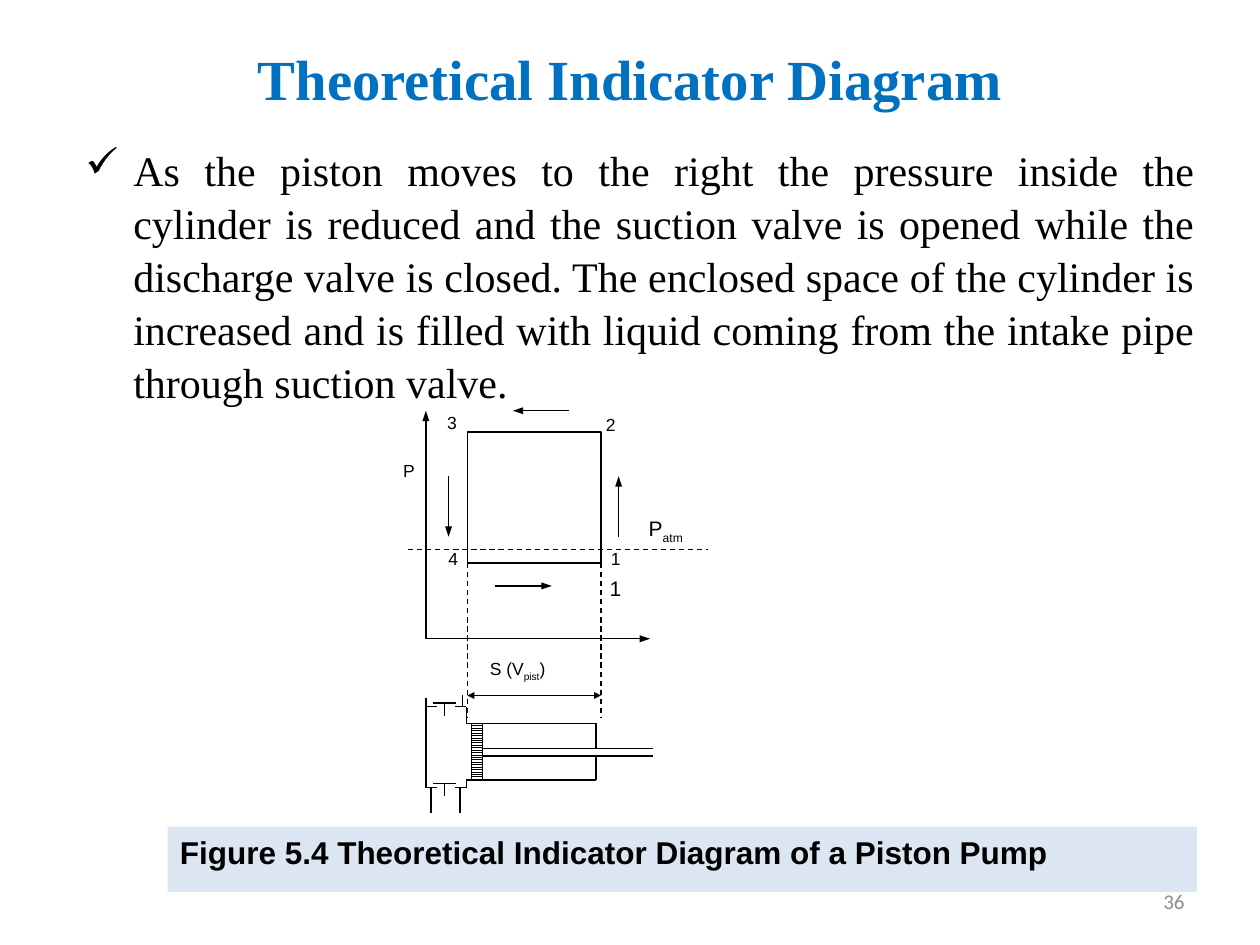
from pptx import Presentation
from pptx.dml.color import RGBColor
from pptx.enum.dml import MSO_LINE, MSO_PATTERN
from pptx.enum.shapes import MSO_CONNECTOR, MSO_SHAPE
from pptx.enum.text import MSO_ANCHOR as Anchor, PP_ALIGN as Align
from pptx.oxml.ns import qn
from pptx.util import Emu, Pt
from lxml.etree import SubElement

PX = 9144
BLACK = "000000"


def px(value):
    return Emu(value * PX)


def color(hex_string):
    return RGBColor.from_string(hex_string)


class IndicatorSlide:
    line_width = Pt(0.75)

    def __init__(self, presentation):
        self.shapes = presentation.slides.add_slide(presentation.slide_layouts[6]).shapes

    def add_runs(self, shape, runs, size, font="Arial", ink=BLACK, bold=False,
                 align=Align.LEFT, anchor=Anchor.TOP):
        frame = shape.text_frame
        frame.word_wrap = True
        frame.vertical_anchor = anchor
        paragraph = frame.paragraphs[0]
        paragraph.alignment = align
        for text, baseline in runs:
            run = paragraph.add_run()
            run.text = text
            run.font.name = font
            run.font.size = Pt(size)
            run.font.bold = bold
            run.font.color.rgb = color(ink)
            if baseline:
                run._r.get_or_add_rPr().set("baseline", str(baseline))
        return paragraph

    def text(self, box, runs, size, **style):
        if isinstance(runs, str):
            runs = [(runs, 0)]
        shape = self.shapes.add_textbox(*map(px, box))
        return self.add_runs(shape, runs, size, **style)

    def bullet(self, box, mark, text, size, indent, **style):
        paragraph = self.text(box, text, size, **style)
        paragraph.line_spacing = 1.05
        properties = paragraph._p.get_or_add_pPr()
        properties.set("marL", str(px(indent)))
        properties.set("indent", str(-px(indent)))
        SubElement(properties, qn("a:buChar")).set("char", mark)

    def rectangle(self, box, fill=None, outlined=True):
        shape = self.shapes.add_shape(MSO_SHAPE.RECTANGLE, *map(px, box))
        shape.shadow.inherit = False
        if fill:
            shape.fill.solid()
            shape.fill.fore_color.rgb = color(fill)
        else:
            shape.fill.background()
        if outlined:
            shape.line.color.rgb = color(BLACK)
            shape.line.width = self.line_width
        else:
            shape.line.fill.background()
        return shape

    def hatched(self, box):
        fill = self.rectangle(box).fill
        fill.patterned()
        fill.pattern = MSO_PATTERN.LIGHT_HORIZONTAL
        fill.fore_color.rgb = color(BLACK)
        fill.back_color.rgb = color("FFFFFF")

    def line(self, x1, y1, x2, y2, dashed=False, heads=(), head_length="med"):
        connector = self.shapes.add_connector(
            MSO_CONNECTOR.STRAIGHT, *map(px, (x1, y1, x2, y2)))
        connector.line.color.rgb = color(BLACK)
        connector.line.width = self.line_width
        if dashed:
            connector.line.dash_style = MSO_LINE.DASH
        properties = connector._element.spPr
        outline = properties.find(qn("a:ln"))
        for end in heads:
            head = SubElement(outline, qn("a:" + end))
            head.set("type", "triangle")
            head.set("w", "sm")
            head.set("len", head_length)
        SubElement(properties, qn("a:effectLst"))

    def arrow(self, x1, y1, x2, y2):
        self.line(x1, y1, x2, y2, heads=["tailEnd"])


def draw_diagram(slide):
    left, right, top, bottom = 371, 477, 343, 447
    axis_x, axis_y = 338, 507

    slide.arrow(axis_x, axis_y, axis_x, 326)
    slide.arrow(axis_x, axis_y, 516, axis_y)
    slide.rectangle((left, top, right - left, bottom - top))
    slide.line(324, 436, 562, 436, dashed=True)
    for x in (left, right):
        slide.line(x, bottom, x, 569, dashed=True)
    slide.line(left, 552, right, 552, heads=["headEnd", "tailEnd"], head_length="sm")

    for ends in ((491, 426, 491, 378), (452, 326, 407, 326),
                 (356, 378, 356, 426), (393, 465, 438, 465)):
        slide.arrow(*ends)

    for x, y, label in ((471, 324, "2"), (345, 322, "3"), (346, 430, "4"),
                        (475, 430, "1"), (310, 360, "P")):
        slide.text((x, y, 45, 32), label, 10)
    slide.text((474, 452, 45, 32), "1", 12)
    slide.text((505, 404, 125, 48), [("P", 0), ("atm", -30000)], 12)
    slide.text((379, 517, 125, 48), [("S (V", 0), ("pist", -30000), (")", 0)], 10)


def draw_pump(slide):
    head_left, head_right, cylinder_right = 338, 370, 473

    for seat in (561, 625):
        slide.line(head_left, seat, 347, seat)
        slide.line(361, seat, head_right, seat)
        slide.line(344, seat - 3, 362, seat - 3)
        slide.line(353, seat - 3, 353, seat + 7)
    slide.line(head_left, 554, head_left, 625)
    slide.line(367, 552, 367, 561)
    for x in (342, 365):
        slide.line(x, 625, x, 645)

    for wall, seat, rod in ((574, 561, 594), (619, 625, 600)):
        slide.line(head_right, wall, cylinder_right, wall)
        slide.line(head_right, wall, head_right, seat)
        slide.line(cylinder_right, wall, cylinder_right, rod)
        slide.line(383, rod, 518, rod)
    slide.hatched((374, 574, 9, 45))


def main():
    presentation = Presentation()
    presentation.slide_width = px(1000)
    presentation.slide_height = px(750)
    slide = IndicatorSlide(presentation)

    slide.text((50, 30, 900, 125), "Theoretical Indicator Diagram", 32.4,
               font="Times New Roman", ink="0070C0", bold=True, align=Align.CENTER)
    slide.bullet(
        (58, 108, 900, 208), "✓",
        "As the piston moves to the right the pressure inside the cylinder is reduced "
        "and the suction valve is opened while the discharge valve is closed. The "
        "enclosed space of the cylinder is increased and is filled with liquid coming "
        "from the intake pipe through suction valve.",
        24, indent=38, font="Times New Roman", align=Align.JUSTIFY)
    draw_diagram(slide)
    draw_pump(slide)
    caption = slide.rectangle((133, 656, 817, 52), fill="DCE6F2", outlined=False)
    slide.add_runs(caption, [("Figure 5.4 Theoretical Indicator Diagram of a Piston Pump", 0)],
                   18, bold=True)
    slide.text((717, 695, 233, 40), "36", 12, font="Calibri", ink="8C8C8C",
               align=Align.RIGHT, anchor=Anchor.MIDDLE)
    presentation.save("out.pptx")


if __name__ == "__main__":
    main()
